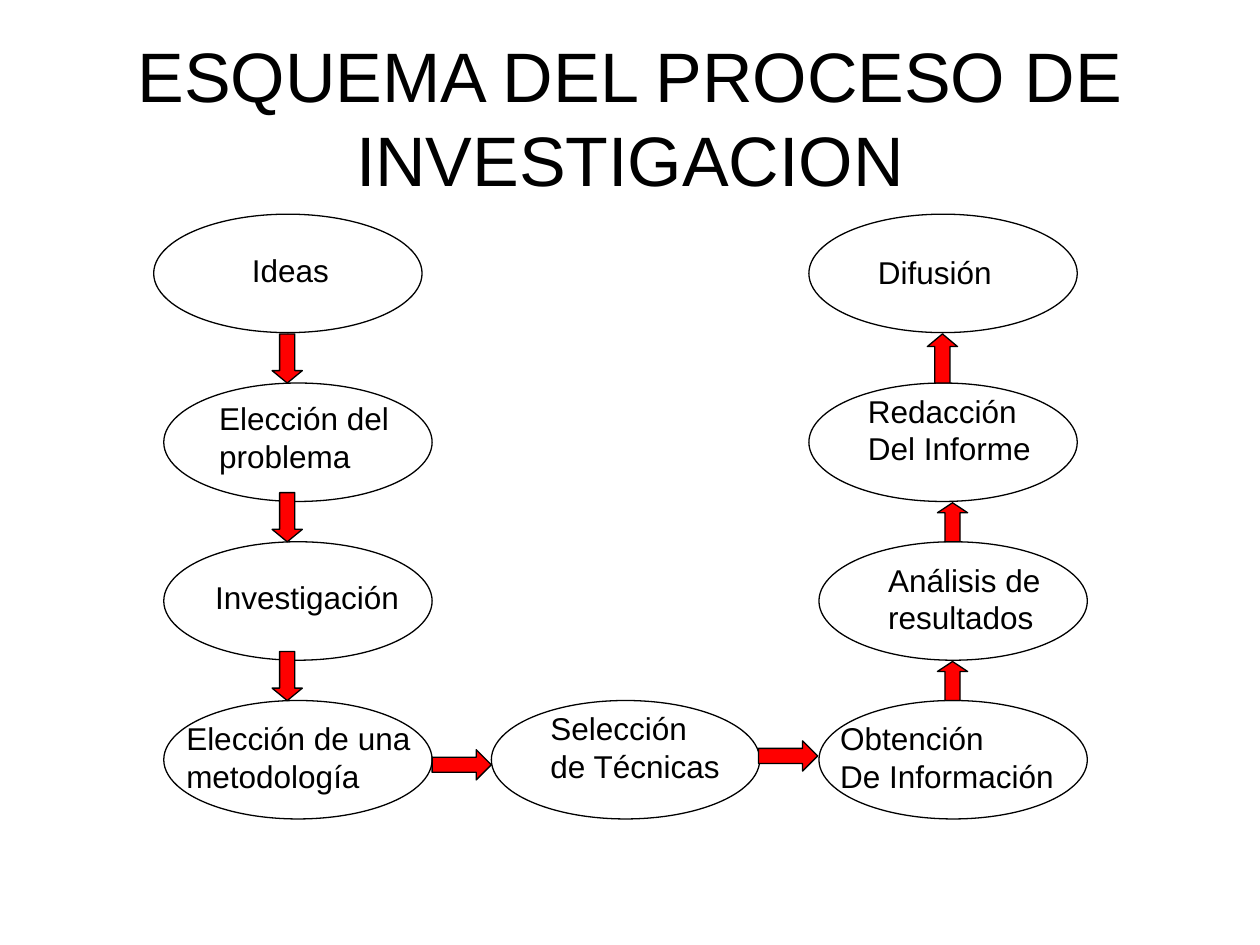
from pptx import Presentation
from pptx import util as u
from pptx.dml.color import RGBColor
from pptx.enum import shapes, text

PX = 9144  # EMU per px, 100 px to the inch
BLACK, RED = "000000", "FF0000"
OVAL = (213, 94)
ROWS = (170, 304, 430, 556)
KIND = shapes.MSO_SHAPE

# Left, top of each oval; left, top, width of its label inside; lines
STEPS = [
    (122, ROWS[0], (68, 24, 81), ["Ideas"]),
    (130, ROWS[1], (34, 8, 155), ["Elección del", "problema"]),
    (130, ROWS[2], (31, 24, 166), ["Investigación"]),
    (130, ROWS[3], (8, 10, 198), ["Elección de una", "metodología"]),
    (390, ROWS[3], (37, 2, 155), ["Selección", "de Técnicas"]),
    (650, ROWS[3], (7, 10, 190), ["Obtención", "De Información"]),
    (650, ROWS[2], (45, 10, 148), ["Análisis de", "resultados"]),
    (642, ROWS[1], (37, 2, 149), ["Redacción", "Del Informe"]),
    (642, ROWS[0], (45, 26, 110), ["Difusión"]),
]

# Kind, box, head length relative to the arrow's thickness
ARROWS = [(KIND.DOWN_ARROW, (216, row - 39, 24, 39), 0.41) for row in ROWS[1:]]
ARROWS += [
    (KIND.RIGHT_ARROW, (343, 595, 47, 24), 0.5),
    (KIND.RIGHT_ARROW, (602, 588, 47, 24), 0.5),
    (KIND.UP_ARROW, (744, 525, 24, 31), 0.33),
    (KIND.UP_ARROW, (744, 399, 24, 31), 0.33),
    (KIND.UP_ARROW, (736, 265, 24, 39), 0.42),
]


def color(code):
    return RGBColor.from_string(code)


def scale(box):
    return [n * PX for n in box]


def add_text(slide, box, lines, size, wrap=False, align=text.PP_ALIGN.LEFT):
    frame = slide.shapes.add_textbox(*scale(box)).text_frame
    frame.word_wrap = wrap
    frame.vertical_anchor = text.MSO_ANCHOR.MIDDLE if wrap else text.MSO_ANCHOR.TOP
    frame.auto_size = (text.MSO_AUTO_SIZE.NONE if wrap
                       else text.MSO_AUTO_SIZE.SHAPE_TO_FIT_TEXT)
    for i, line in enumerate(lines):
        para = frame.add_paragraph() if i else frame.paragraphs[0]
        para.alignment = align
        run = para.add_run()
        run.text = line
        run.font.name = "Arial"
        run.font.size = u.Pt(size)
        run.font.color.rgb = color(BLACK)


def add_form(slide, kind, box, fill=None):
    form = slide.shapes.add_shape(kind, *scale(box))
    form.shadow.inherit = False
    if fill:
        form.fill.solid()
        form.fill.fore_color.rgb = color(fill)
    else:
        form.fill.background()
    form.line.color.rgb = color(BLACK)
    form.line.width = u.Pt(0.75)
    return form


def add_step(slide, left, top, label, lines):
    add_form(slide, KIND.OVAL, (left, top, *OVAL))
    dx, dy, wide = label
    high = 10 + 30 * len(lines)
    add_text(slide, (left + dx, top + dy, wide, high), lines, 18)


def add_arrow(slide, kind, box, head):
    arrow = add_form(slide, kind, box, RED)
    arrow.adjustments[0] = 0.5
    arrow.adjustments[1] = head


def main():
    deck = Presentation()
    deck.slide_width, deck.slide_height = scale((1000, 750))
    slide = deck.slides.add_slide(deck.slide_layouts[6])

    # Title
    add_text(slide, (50, 30, 900, 125), ["ESQUEMA DEL PROCESO DE INVESTIGACION"],
             40, wrap=True, align=text.PP_ALIGN.CENTER)

    # Steps, then the arrows that lie over them
    for step in STEPS:
        add_step(slide, *step)
    for arrow in ARROWS:
        add_arrow(slide, *arrow)

    deck.save("out.pptx")


if __name__ == "__main__":
    main()
